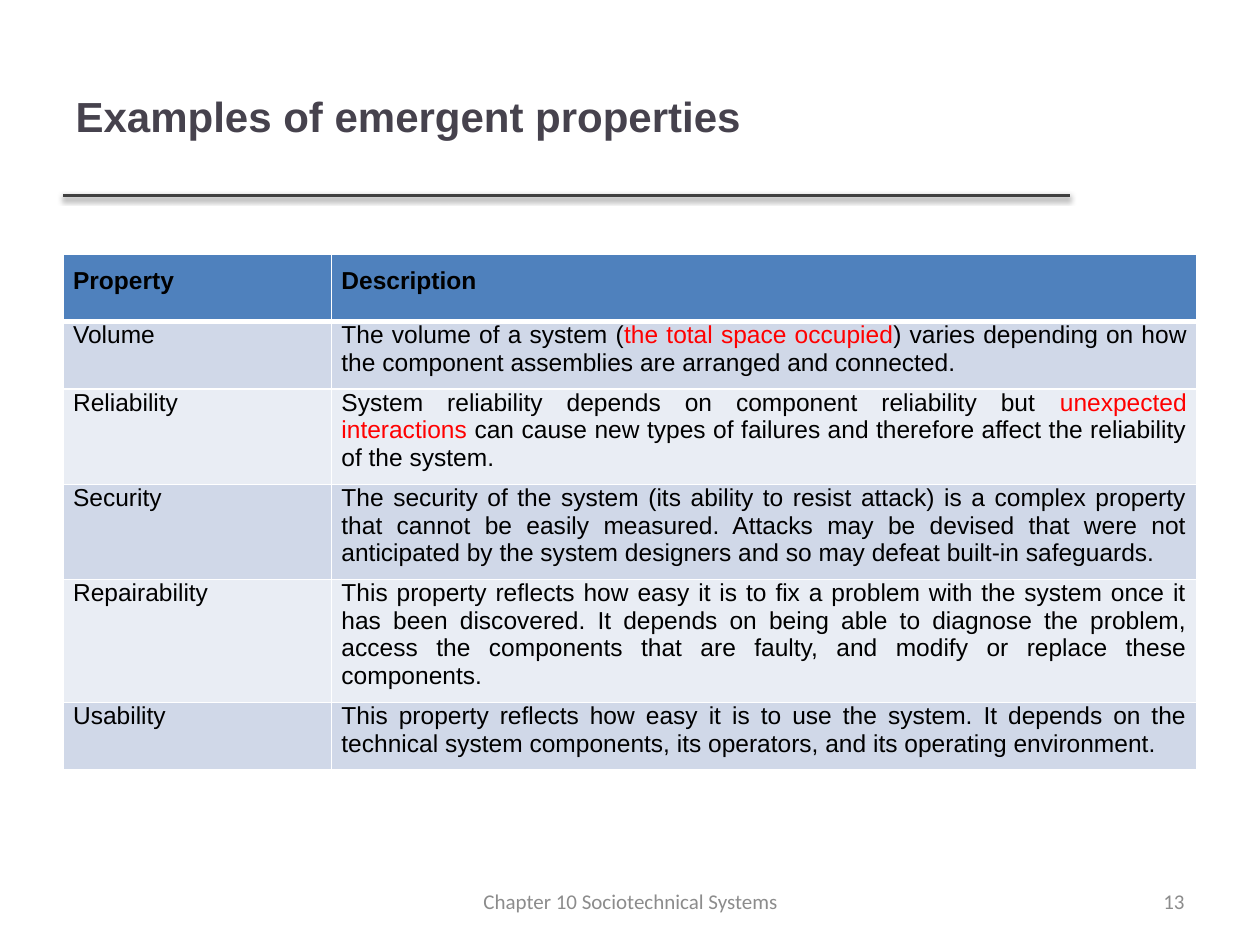
import pptx
import pptx.dml.color
import pptx.enum.shapes
import pptx.enum.text
import pptx.oxml
import pptx.oxml.ns
import pptx.util

Inches = pptx.util.Inches
Pt = pptx.util.Pt
ALIGN = pptx.enum.text.PP_ALIGN
MIDDLE = pptx.enum.text.MSO_ANCHOR.MIDDLE

COLORS = {
    "title": "46424D", "rule": "404040", "text": "000000", "key": "FF0000",
    "head": "4F81BD", "odd": "D0D8E8", "even": "E9EDF4",
    "edge": "FFFFFF", "foot": "8C8C8C",
}

# Every second part of a description is highlighted.
ROWS = [
    ("Property", ["Description"]),
    ("Volume", [
        "The volume of a system (", "the total space occupied",
        ") varies depending on how the component assemblies are arranged "
        "and connected."]),
    ("Reliability", [
        "System reliability depends on component reliability but ",
        "unexpected interactions",
        " can cause new types of failures and therefore affect the "
        "reliability of the system."]),
    ("Security", [
        "The security of the system (its ability to resist attack) is a "
        "complex property that cannot be easily measured. Attacks may be "
        "devised that were not anticipated by the system designers and so "
        "may defeat built-in safeguards."]),
    ("Repairability", [
        "This property reflects how easy it is to fix a problem with the "
        "system once it has been discovered. It depends on being able to "
        "diagnose the problem, access the components that are faulty, and "
        "modify or replace these components."]),
    ("Usability", [
        "This property reflects how easy it is to use the system. It depends "
        "on the technical system components, its operators, and its "
        "operating environment."]),
]


def rgb(name):
    return pptx.dml.color.RGBColor.from_string(COLORS[name])


def style(run, font, size, color, bold=False):
    run.font.name = font
    run.font.size = Pt(size)
    run.font.bold = bold
    run.font.color.rgb = rgb(color)


def xml(text):
    return pptx.oxml.parse_xml(
        text.replace(">", " " + pptx.oxml.ns.nsdecls("a") + ">", 1))


def add_title(slide, text):
    title = slide.shapes.title
    title.left, title.top = Inches(0.5), Inches(0.29)
    title.width, title.height = Inches(9), Inches(1.25)
    frame = title.text_frame
    frame.text = text
    frame.vertical_anchor = MIDDLE
    para = frame.paragraphs[0]
    para.alignment = ALIGN.LEFT
    style(para.runs[0], "Arial", 24, "title", True)


def add_rule(slide):
    """Draw the line under the title, with its soft shadow."""
    rule = slide.shapes.add_connector(
        pptx.enum.shapes.MSO_CONNECTOR.STRAIGHT,
        Inches(0.5), Inches(1.55), Inches(8.49), Inches(1.55))
    rule.line.color.rgb = rgb("rule")
    rule.line.width = Pt(2)
    rule._element.spPr.append(xml(
        f'<a:effectLst><a:outerShdw blurRad="{Pt(3.1)}" dist="{Pt(1.6)}" '
        'dir="5400000" rotWithShape="0"><a:srgbClr val="000000">'
        '<a:alpha val="38000"/></a:srgbClr></a:outerShdw></a:effectLst>'))


def add_edges(cell, row):
    """Give a cell white borders, thick between header and body."""
    widths = {"L": 1, "R": 1, "T": 3 if row == 1 else 1,
              "B": 3 if row == 0 else 1}
    props = cell._tc.get_or_add_tcPr()
    for side, width in widths.items():
        props.append(xml(
            f'<a:ln{side} w="{Pt(width)}"><a:solidFill>'
            f'<a:srgbClr val="{COLORS["edge"]}"/></a:solidFill></a:ln{side}>'))


def fill_cell(cell, row, parts):
    add_edges(cell, row)
    cell.fill.solid()
    cell.fill.fore_color.rgb = rgb(
        "head" if row == 0 else "odd" if row % 2 else "even")
    cell.margin_left = cell.margin_right = Inches(0.08)
    cell.margin_top = Inches(0 if row else 0.1)
    cell.margin_bottom = Inches(0.1)
    para = cell.text_frame.paragraphs[0]
    para.alignment = ALIGN.JUSTIFY
    for i, part in enumerate(parts):
        run = para.add_run()
        run.text = part
        style(run, "Arial", 14, "key" if i % 2 else "text", row == 0)


def add_grid(slide):
    table = slide.shapes.add_table(
        len(ROWS), 2, Inches(0.5), Inches(2.02),
        Inches(9), Inches(2.58)).table
    table.columns[0].width = Inches(2.13)
    table.columns[1].width = Inches(6.87)
    for row, (name, parts) in enumerate(ROWS):
        table.rows[row].height = Inches(0.41 if row else 0.53)
        fill_cell(table.cell(row, 0), row, [name])
        fill_cell(table.cell(row, 1), row, parts)


def add_foot(slide, left, width, text, align):
    box = slide.shapes.add_textbox(
        Inches(left), Inches(6.95), Inches(width), Inches(0.4))
    frame = box.text_frame
    frame.word_wrap = True
    frame.vertical_anchor = MIDDLE
    frame.text = text
    para = frame.paragraphs[0]
    para.alignment = align
    style(para.runs[0], "Calibri", 12, "foot")


def main():
    deck = pptx.Presentation()
    deck.slide_width, deck.slide_height = Inches(10), Inches(7.5)
    slide = deck.slides.add_slide(deck.slide_layouts[5])
    add_rule(slide)
    add_title(slide, "Examples of emergent properties")
    add_grid(slide)
    add_foot(slide, 7.17, 2.33, "13", ALIGN.RIGHT)
    add_foot(slide, 3.42, 3.17, "Chapter 10 Sociotechnical Systems",
             ALIGN.CENTER)
    deck.save("out.pptx")


if __name__ == "__main__":
    main()
